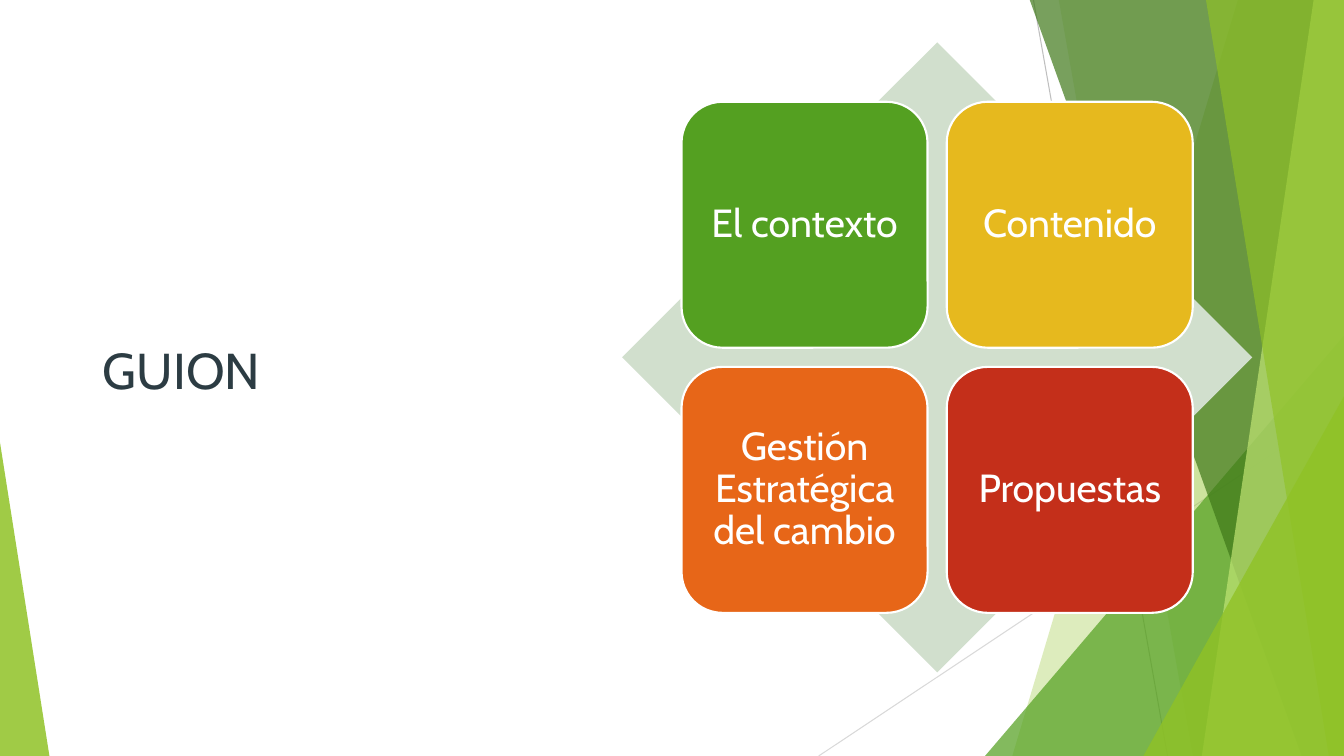
from dataclasses import dataclass
from lxml.etree import SubElement
from pptx import Presentation
from pptx.dml.color import RGBColor
from pptx.enum.shapes import MSO_CONNECTOR, MSO_SHAPE
from pptx.enum.text import MSO_ANCHOR, PP_ALIGN
from pptx.oxml.ns import qn
from pptx.util import Pt

EMU_PER_PX = 9144
SLIDE_WIDTH, SLIDE_HEIGHT = 1333, 750


@dataclass(frozen=True)
class Theme:
    font: str = "Cabin"
    title_size: int = 36
    card_size: int = 28
    card_outline: float = 1.5
    hairline: float = 0.75
    ink: str = "2C3C43"
    white: str = "FFFFFF"
    sage: str = "D1DFCD"
    lime: str = "90C226"
    pale_lime: str = "C0E474"
    green: str = "54A021"
    forest: str = "3F7819"
    yellow: str = "E6B91E"
    orange: str = "E76618"
    red: str = "C42F1A"
    gray: str = "BFBFBF"
    light_gray: str = "D9D9D9"


THEME = Theme()


def px(length):
    return length * EMU_PER_PX


def rgb(color):
    return RGBColor.from_string(color)


def paint(shape, color, opacity=100):
    shape.shadow.inherit = False
    shape.line.fill.background()
    shape.fill.solid()
    shape.fill.fore_color.rgb = rgb(color)
    if opacity < 100:
        tint = shape.element.spPr.find(qn("a:solidFill"))[0]
        SubElement(tint, qn("a:alpha")).set("val", str(opacity * 1000))


def add_hairline(slide, start, end, color):
    hairline = slide.shapes.add_connector(
        MSO_CONNECTOR.STRAIGHT, *map(px, start + end))
    hairline.line.color.rgb = rgb(color)
    hairline.line.width = Pt(THEME.hairline)
    SubElement(hairline.element.spPr, qn("a:effectLst"))


def add_band(slide, top_left, bottom_left, color, opacity):
    builder = slide.shapes.build_freeform(px(top_left), px(-1), scale=1.0)
    corners = [(SLIDE_WIDTH, -1), (SLIDE_WIDTH, SLIDE_HEIGHT),
               (bottom_left, SLIDE_HEIGHT)]
    builder.add_line_segments([(px(x), px(y)) for x, y in corners], close=True)
    paint(builder.convert_to_shape(), color, opacity)


def add_preset(slide, kind, left, top, width, height, color, opacity=100):
    preset = slide.shapes.add_shape(kind, *map(px, (left, top, width, height)))
    paint(preset, color, opacity)
    return preset


def add_wedge(slide, left, top, width, apex, color, opacity):
    wedge = add_preset(slide, MSO_SHAPE.ISOSCELES_TRIANGLE, left, top, width,
                       SLIDE_HEIGHT - top, color, opacity)
    wedge.adjustments[0] = apex


def write(frame, words, size, color, align):
    frame.word_wrap = True
    frame.vertical_anchor = MSO_ANCHOR.MIDDLE
    paragraph = frame.paragraphs[0]
    paragraph.alignment = align
    run = paragraph.add_run()
    run.text = words
    run.font.name = THEME.font
    run.font.size = Pt(size)
    run.font.color.rgb = rgb(color)
    return paragraph


def add_title(slide, words):
    title = slide.shapes.title
    title.left, title.top, title.width, title.height = map(px, (92, 61, 480, 610))
    write(title.text_frame, words, THEME.title_size, THEME.ink, PP_ALIGN.LEFT)


def add_card(slide, left, top, side, words, color):
    card = add_preset(slide, MSO_SHAPE.ROUNDED_RECTANGLE,
                      left, top, side, side, color)
    card.line.color.rgb = rgb(THEME.white)
    card.line.width = Pt(THEME.card_outline)
    frame = card.text_frame
    frame.margin_left = frame.margin_right = px(12)
    frame.margin_top = frame.margin_bottom = px(12)
    paragraph = write(frame, words, THEME.card_size, THEME.white, PP_ALIGN.CENTER)
    paragraph.line_spacing = 0.9


def add_backdrop(slide):
    add_hairline(slide, (1025, 0), (1158, SLIDE_HEIGHT), THEME.gray)
    add_hairline(slide, (SLIDE_WIDTH, 403), (812, SLIDE_HEIGHT), THEME.light_gray)
    add_band(slide, 1228, 1004, THEME.lime, 30)
    add_band(slide, 1050, 1183, THEME.lime, 20)
    add_wedge(slide, 977, 333, 356, 1, THEME.green, 72)
    add_band(slide, 1021, 1291, THEME.forest, 70)
    add_band(slide, 1303, 1192, THEME.pale_lime, 70)
    add_band(slide, 1196, 1318, THEME.lime, 65)
    add_wedge(slide, 1134, 393, 199, 1, THEME.lime, 80)
    add_wedge(slide, 0, 439, 49, 0, THEME.lime, 85)


def add_matrix(slide):
    add_preset(slide, MSO_SHAPE.DIAMOND, 617, 42, 625, 625, THEME.sage)
    left, top, side, pitch = 676, 101, 244, 263
    topics = [
        ("El contexto", THEME.green),
        ("Contenido", THEME.yellow),
        ("Gestión Estratégica del cambio", THEME.orange),
        ("Propuestas", THEME.red),
    ]
    for index, (topic, color) in enumerate(topics):
        row, column = divmod(index, 2)
        add_card(slide, left + column * pitch, top + row * pitch, side, topic, color)


def main():
    presentation = Presentation()
    presentation.slide_width = px(SLIDE_WIDTH)
    presentation.slide_height = px(SLIDE_HEIGHT)
    slide = presentation.slides.add_slide(presentation.slide_layouts[5])
    add_backdrop(slide)
    add_title(slide, "GUION")
    add_matrix(slide)
    presentation.save("out.pptx")


if __name__ == "__main__":
    main()
